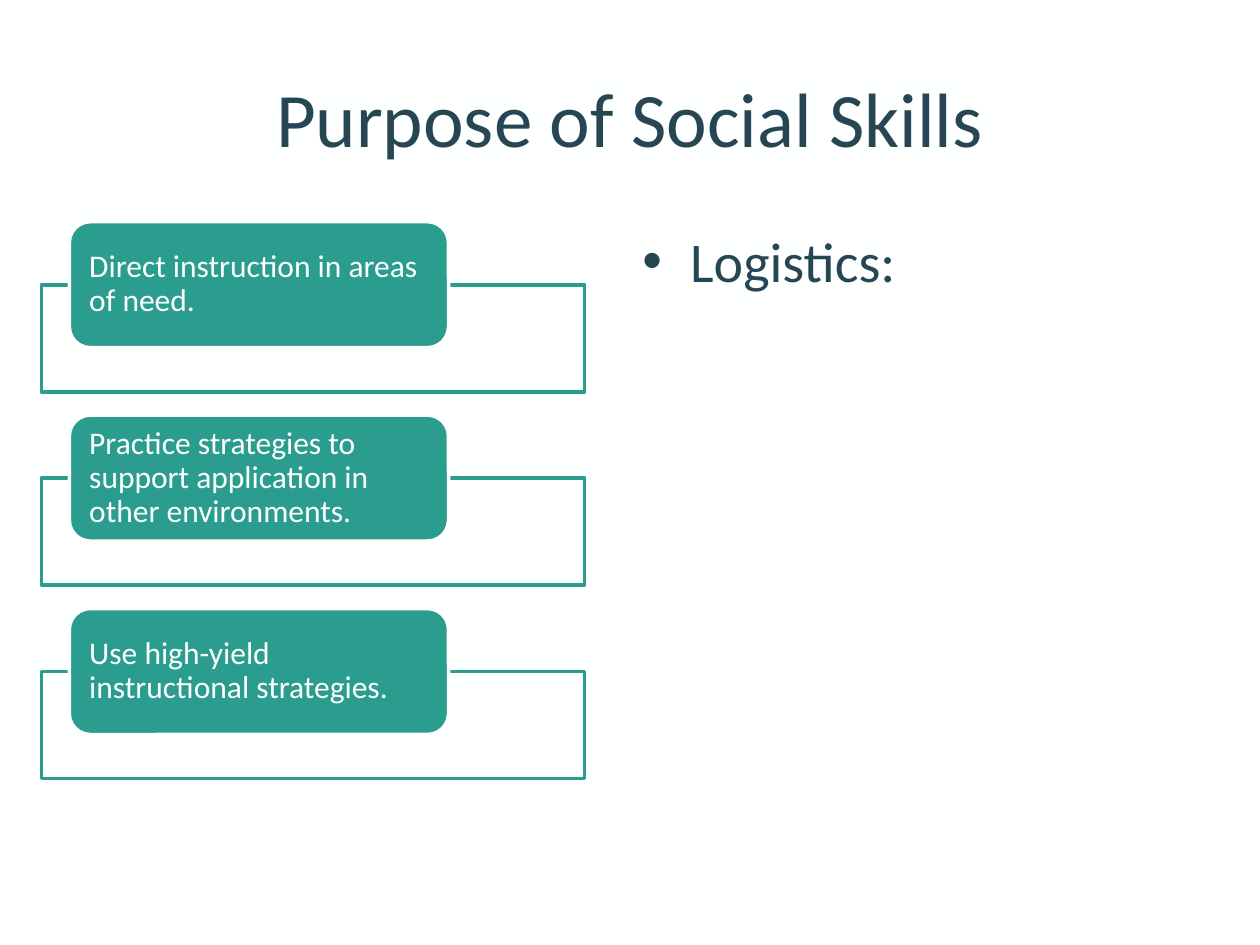
from dataclasses import dataclass

from lxml import etree
from pptx import Presentation
from pptx.dml.color import RGBColor
from pptx.enum.shapes import MSO_SHAPE
from pptx.enum.text import MSO_ANCHOR, PP_ALIGN
from pptx.oxml.ns import qn
from pptx.shapes.autoshape import Shape
from pptx.slide import Slide
from pptx.text.text import _Paragraph as Paragraph
from pptx.util import Inches, Pt

RECTANGLE = MSO_SHAPE.RECTANGLE
ROUNDED = MSO_SHAPE.ROUNDED_RECTANGLE
MIDDLE = MSO_ANCHOR.MIDDLE
LEFT, CENTER = PP_ALIGN.LEFT, PP_ALIGN.CENTER

COLORS = {"paper": "FEFFFF", "ink": "264653", "teal": "2A9D8F"}
FONT = "Calibri"
OUTLINE_WIDTH = 2

PURPOSES = [
    "Direct instruction in areas of need.",
    "Practice strategies to support application in other environments.",
    "Use high-yield instructional strategies.",
]
ROW_PITCH = 1.535


@dataclass(frozen=True)
class Box:
    """A place on the slide, in inches."""

    left: float
    top: float
    width: float
    height: float

    def in_row(self, row: int) -> "Box":
        return Box(self.left, self.top + row * ROW_PITCH, self.width, self.height)

    def lengths(self) -> list[int]:
        return [Inches(n) for n in (self.left, self.top, self.width, self.height)]


TITLE = Box(0.5, 0.3, 9, 1.25)
BODY = Box(5, 1.75, 4.5, 4.95)
FRAME = Box(0.33, 2.26, 4.31, 0.85)
LABEL = Box(0.55, 1.76, 3.01, 1)


def color(name: str) -> RGBColor:
    return RGBColor.from_string(COLORS[name])


def write(shape: Shape, text: str, size: int, ink: str, align: PP_ALIGN) -> Paragraph:
    """Set a one-paragraph text and format it."""
    shape.text_frame.word_wrap = True
    paragraph = shape.text_frame.paragraphs[0]
    paragraph.text = text
    paragraph.alignment = align
    font = paragraph.runs[0].font
    font.name, font.size = FONT, Pt(size)
    font.color.rgb = color(ink)
    return paragraph


def add_panel(slide: Slide, kind: MSO_SHAPE, box: Box, fill: str, line: str) -> Shape:
    shape = slide.shapes.add_shape(kind, *box.lengths())
    shape.shadow.inherit = False
    shape.fill.solid()
    shape.fill.fore_color.rgb = color(fill)
    shape.line.color.rgb = color(line)
    shape.line.width = Pt(OUTLINE_WIDTH)
    return shape


def set_opacity(shape: Shape, percent: int) -> None:
    fill_color = shape.fill._xPr.find(qn("a:solidFill"))[0]
    etree.SubElement(fill_color, qn("a:alpha"), val=str(percent * 1000))


def add_bullet(paragraph: Paragraph, indent: float) -> None:
    properties = paragraph._p.get_or_add_pPr()
    properties.set("marL", str(Inches(indent)))
    properties.set("indent", str(-Inches(indent)))
    etree.SubElement(properties, qn("a:buFont"), typeface="Arial")
    etree.SubElement(properties, qn("a:buChar"), char="•")


def add_purpose(slide: Slide, row: int, text: str) -> None:
    """Draw an outlined frame with a filled label over its top edge."""
    frame = add_panel(slide, RECTANGLE, FRAME.in_row(row), "paper", "teal")
    set_opacity(frame, 90)
    label = add_panel(slide, ROUNDED, LABEL.in_row(row), "teal", "paper")
    text_frame = label.text_frame
    text_frame.vertical_anchor = MIDDLE
    text_frame.margin_left = text_frame.margin_right = Inches(0.11)
    text_frame.margin_top = text_frame.margin_bottom = 0
    write(label, text, 18, "paper", LEFT).line_spacing = 0.9


def main() -> None:
    presentation = Presentation()
    presentation.slide_width, presentation.slide_height = Inches(10), Inches(7.5)
    slide = presentation.slides.add_slide(presentation.slide_layouts[6])
    slide.background.fill.solid()
    slide.background.fill.fore_color.rgb = color("paper")

    title = slide.shapes.add_textbox(*TITLE.lengths())
    title.text_frame.vertical_anchor = MIDDLE
    write(title, "Purpose of Social Skills", 44, "ink", CENTER)

    body = slide.shapes.add_textbox(*BODY.lengths())
    logistics = write(body, "Logistics:", 32, "ink", LEFT)
    logistics.space_before = Pt(6.4)
    add_bullet(logistics, 0.38)

    for row, text in enumerate(PURPOSES):
        add_purpose(slide, row, text)

    presentation.save("out.pptx")


if __name__ == "__main__":
    main()
